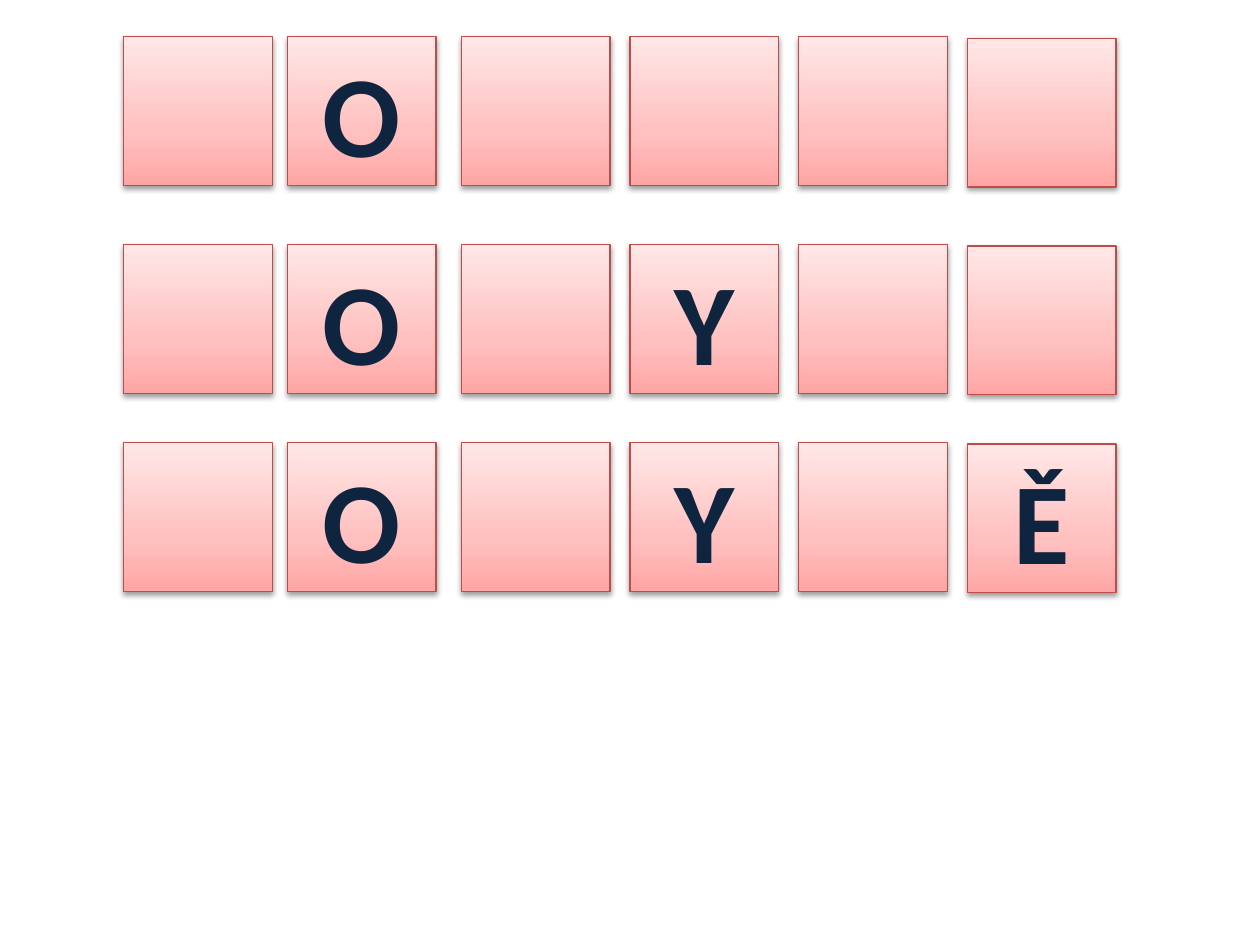
from copy import deepcopy

from lxml.etree import SubElement
from pptx import Presentation
from pptx.dml.color import RGBColor
from pptx.enum.shapes import MSO_SHAPE
from pptx.enum.text import MSO_ANCHOR, PP_ALIGN
from pptx.oxml import parse_xml
from pptx.oxml.ns import qn
from pptx.util import Cm, Pt

# Content: one string per row of tiles, a space is an empty tile
ROWS = [" O    ", " O Y  ", " O Y Ě"]

# Layout in centimetres
COLUMN_LEFTS = [2.49, 5.79, 9.3, 12.7, 16.1, 19.5]
ROW_TOPS = [0.74, 4.93, 8.92]
TILE_SIZE = 3
LAST_COLUMN_DROP = 0.03

# Colours and formats
BORDER = RGBColor(0xBF, 0x4C, 0x48)
INK = RGBColor(0x0F, 0x24, 0x3E)
LETTER_OUTLINE = RGBColor(0xD7, 0x3A, 0x36)
GRADIENT = [
    (0, RGBColor(0xFF, 0xA6, 0xA5)),
    (0.35, RGBColor(0xFF, 0xC0, 0xBF)),
    (1, RGBColor(0xFF, 0xE7, 0xE7)),
]
LETTER_FONT = {"name": "Calibri", "size": Pt(66), "bold": True}
DRAWING_NS = "http://schemas.openxmlformats.org/drawingml/2006/main"
SHADOW = (
    f'<a:effectLst xmlns:a="{DRAWING_NS}">'
    '<a:outerShdw blurRad="40000" dist="20000" dir="5400000" rotWithShape="0">'
    '<a:srgbClr val="000000"><a:alpha val="38000"/></a:srgbClr>'
    "</a:outerShdw></a:effectLst>"
)


def fill_gradient(shape):
    fill = shape.fill
    fill.gradient()
    fill.gradient_angle = 90
    stop_list = shape._element.spPr.find(".//" + qn("a:gsLst"))
    stop_list.insert(1, deepcopy(stop_list[0]))
    for stop, (position, color) in zip(fill.gradient_stops, GRADIENT):
        stop.position = position
        stop.color.rgb = color


def add_letter(shape, letter):
    frame = shape.text_frame
    frame.vertical_anchor = MSO_ANCHOR.MIDDLE
    paragraph = frame.paragraphs[0]
    paragraph.alignment = PP_ALIGN.CENTER
    run = paragraph.add_run()
    run.text = letter
    for name, value in LETTER_FONT.items():
        setattr(run.font, name, value)
    run.font.color.rgb = INK
    # Letter outline comes first among the run properties
    properties = run._r.get_or_add_rPr()
    outline = SubElement(properties, qn("a:ln"), w=str(Pt(1.42)))
    solid = SubElement(outline, qn("a:solidFill"))
    SubElement(solid, qn("a:srgbClr"), val=str(LETTER_OUTLINE))
    properties.insert(0, outline)


def add_tile(slide, left, top, letter):
    tile = slide.shapes.add_shape(
        MSO_SHAPE.RECTANGLE, Cm(left), Cm(top), Cm(TILE_SIZE), Cm(TILE_SIZE)
    )
    fill_gradient(tile)
    tile.line.color.rgb = BORDER
    tile.line.width = Pt(0.75)
    tile._element.spPr.append(parse_xml(SHADOW))
    if letter.strip():
        add_letter(tile, letter)


def main():
    presentation = Presentation()
    presentation.slide_width, presentation.slide_height = Cm(25.4), Cm(19.05)
    slide = presentation.slides.add_slide(presentation.slide_layouts[6])

    # Grid of tiles, the last column sits slightly lower
    for top, letters in zip(ROW_TOPS, ROWS):
        for left, letter in zip(COLUMN_LEFTS, letters):
            drop = LAST_COLUMN_DROP if left == COLUMN_LEFTS[-1] else 0
            add_tile(slide, left, top + drop, letter)

    presentation.save("out.pptx")


if __name__ == "__main__":
    main()
